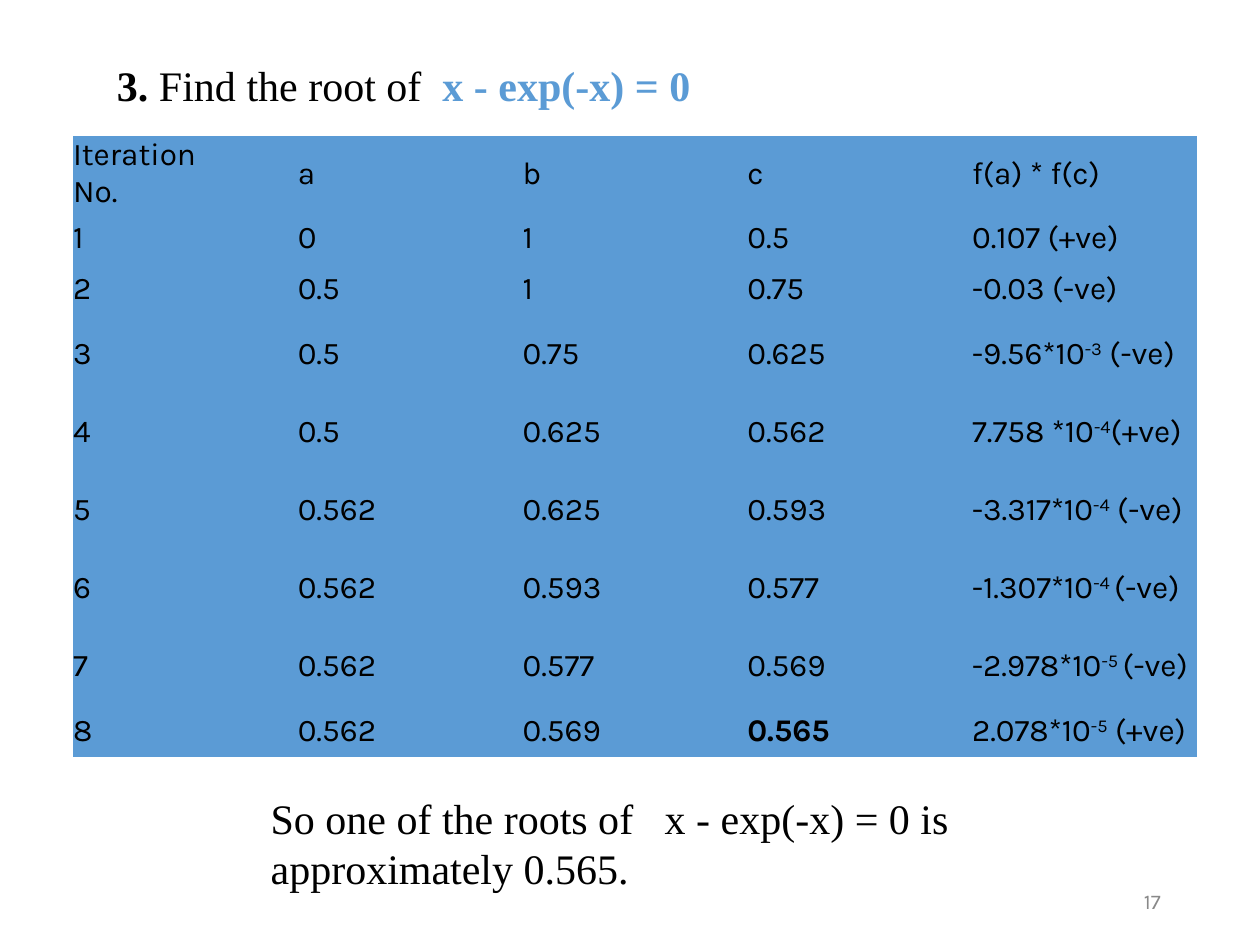
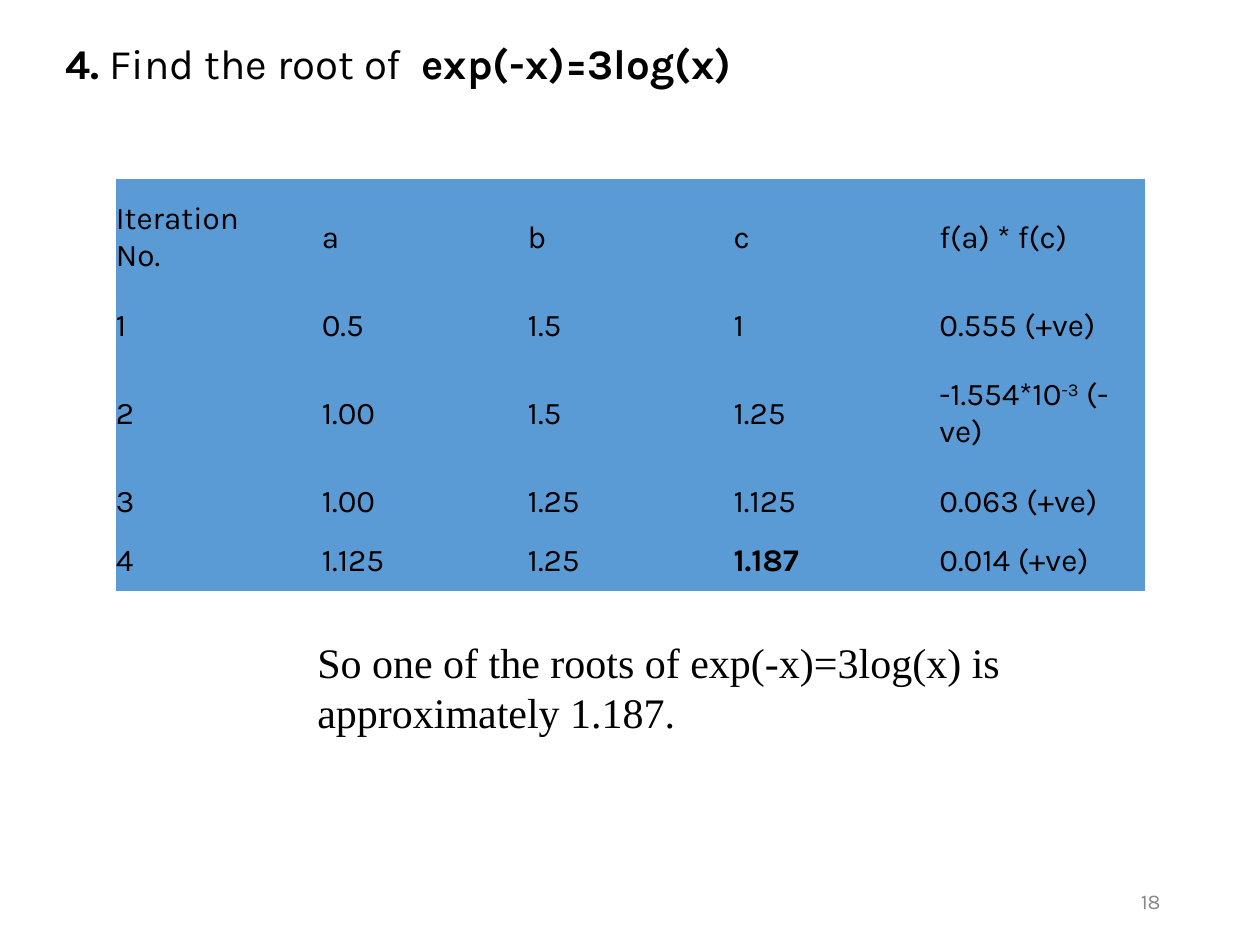
from pptx import Presentation
from pptx.dml.color import RGBColor
from pptx.enum.text import MSO_ANCHOR, MSO_AUTO_SIZE, PP_ALIGN
from pptx.oxml.ns import qn
from pptx.util import Inches, Pt

MIDDLE = MSO_ANCHOR.MIDDLE
RIGHT = PP_ALIGN.RIGHT
GROW = MSO_AUTO_SIZE.SHAPE_TO_FIT_TEXT
NO_STYLE = "{2D5ABB26-0587-4C30-8999-92F81FD0307C}"

COLORS = {"ink": "000000", "accent": "5B9BD5", "muted": "898989"}
SANS, SERIF = "Karla", "Times New Roman"
HEADER = ["Iteration \nNo.", "a", "b", "c", "f(a) * f(c)"]

# Each row: a, b, c, f(a) * f(c); carets enclose a superscript.
EXPONENTIAL_STEPS = [
    ["0", "1", "0.5", "0.107 (+ve)"],
    ["0.5", "1", "0.75", "-0.03 (-ve)"],
    ["0.5", "0.75", "0.625", "-9.56*10^-3^ (-ve)"],
    ["0.5", "0.625", "0.562", "7.758 *10^-4^(+ve)"],
    ["0.562", "0.625", "0.593", "-3.317*10^-4^ (-ve)"],
    ["0.562", "0.593", "0.577", "-1.307*10^-4 ^(-ve)"],
    ["0.562", "0.577", "0.569", "-2.978*10^-5 ^(-ve)"],
    ["0.562", "0.569", "0.565", "2.078*10^-5^ (+ve)"],
]
LOGARITHM_STEPS = [
    ["0.5", "1.5", "1", "0.555 (+ve)"],
    ["1.00", "1.5", "1.25", "-1.554*10^-3^ (-ve)"],
    ["1.00", "1.25", "1.125", "0.063 (+ve)"],
    ["1.125", "1.25", "1.187", "0.014 (+ve)"],
]


class RootDeck:
    def __init__(self):
        self.deck = Presentation()
        self.deck.slide_width = Inches(10)
        self.deck.slide_height = Inches(7.5)
        self.slide = None

    def new_slide(self, number):
        self.slide = self.deck.slides.add_slide(self.deck.slide_layouts[6])
        para = self.text_box(7.06, 6.95, 2.25, 0.4, [(str(number), {})],
                             {"name": SANS, "size": Pt(12), "color": "muted"},
                             {"vertical_anchor": MIDDLE})
        para.alignment = RIGHT

    def add_text(self, para, text, style):
        """Add text, with line breaks and caret-enclosed superscripts."""
        for line_number, line in enumerate(text.split("\n")):
            if line_number:
                para.add_line_break()
            for part_number, part in enumerate(line.split("^")):
                span = para.add_run()
                span.text = part
                for name, value in style.items():
                    if name == "color":
                        span.font.color.rgb = RGBColor.from_string(COLORS[value])
                    else:
                        setattr(span.font, name, value)
                if part_number % 2:
                    span.font._element.set("baseline", "30000")

    def text_box(self, left, top, width, height, spans, style, frame_format):
        box = self.slide.shapes.add_textbox(
            Inches(left), Inches(top), Inches(width), Inches(height))
        for name, value in ({"word_wrap": True} | frame_format).items():
            setattr(box.text_frame, name, value)
        para = box.text_frame.paragraphs[0]
        for text, changes in spans:
            self.add_text(para, text, style | changes)
        return para

    def title(self, left, top, width, number, equation, font, color, wrap):
        style = {"name": font, "size": Pt(24), "color": "ink"}
        spans = [(f"{number}. ", {"bold": True}),
                 ("Find the root of  ", {}),
                 (equation, {"bold": True, "color": color})]
        self.text_box(left, top, width, 0.51, spans, style,
                      {"word_wrap": wrap, "auto_size": GROW})

    def conclusion(self, left, top, width, text):
        style = {"name": SERIF, "size": Pt(24), "color": "ink"}
        self.text_box(left, top, width, 0.91, [(text, {})], style,
                      {"auto_size": GROW})

    def iteration_table(self, left, top, width, heights, steps, root):
        """Draw the numbered steps under the header, with the root in bold."""
        rows = [HEADER] + [[str(number), *step]
                           for number, step in enumerate(steps, 1)]
        table = self.slide.shapes.add_table(
            len(rows), len(HEADER), Inches(left), Inches(top),
            Inches(width), Inches(sum(heights))).table
        table.first_row = table.horz_banding = False
        table._tbl.tblPr.find(qn("a:tableStyleId")).text = NO_STYLE
        cell_format = {"vertical_anchor": MIDDLE, "margin_left": 0,
                       "margin_right": 0, "margin_top": 0, "margin_bottom": 0}
        for row_number, (texts, height) in enumerate(zip(rows, heights)):
            table.rows[row_number].height = Inches(height)
            for cell, text in zip(table.rows[row_number].cells, texts):
                for name, value in cell_format.items():
                    setattr(cell, name, value)
                cell.fill.solid()
                cell.fill.fore_color.rgb = RGBColor.from_string(COLORS["accent"])
                self.add_text(cell.text_frame.paragraphs[0], text,
                              {"name": SANS, "size": Pt(18), "color": "ink",
                               "bold": text == root})


def main():
    roots = RootDeck()

    roots.new_slide(17)
    roots.title(0.83, 0.42, 4.88, 3, "x - exp(-x) = 0", SERIF, "accent", False)
    roots.iteration_table(0.58, 1.08, 8.92, [0.6, 0.41, 0.41] + [0.62] * 5 + [0.41],
                          EXPONENTIAL_STEPS, "0.565")
    roots.conclusion(2.05, 6.24, 7.03, "So one of the roots of   x - exp(-x) = 0 is "
                     "approximately 0.565.")

    roots.new_slide(18)
    roots.title(0.42, 0.25, 6.42, 4, "exp(-x)=3log(x)", SANS, "ink", True)
    roots.iteration_table(0.92, 1.42, 8.17, [0.93, 0.47, 0.93, 0.47, 0.47],
                          LOGARITHM_STEPS, "1.187")
    roots.conclusion(2.42, 5, 6.67, "So one of the roots of exp(-x)=3log(x) is "
                     "approximately 1.187.")

    roots.deck.save("out.pptx")


if __name__ == "__main__":
    main()
